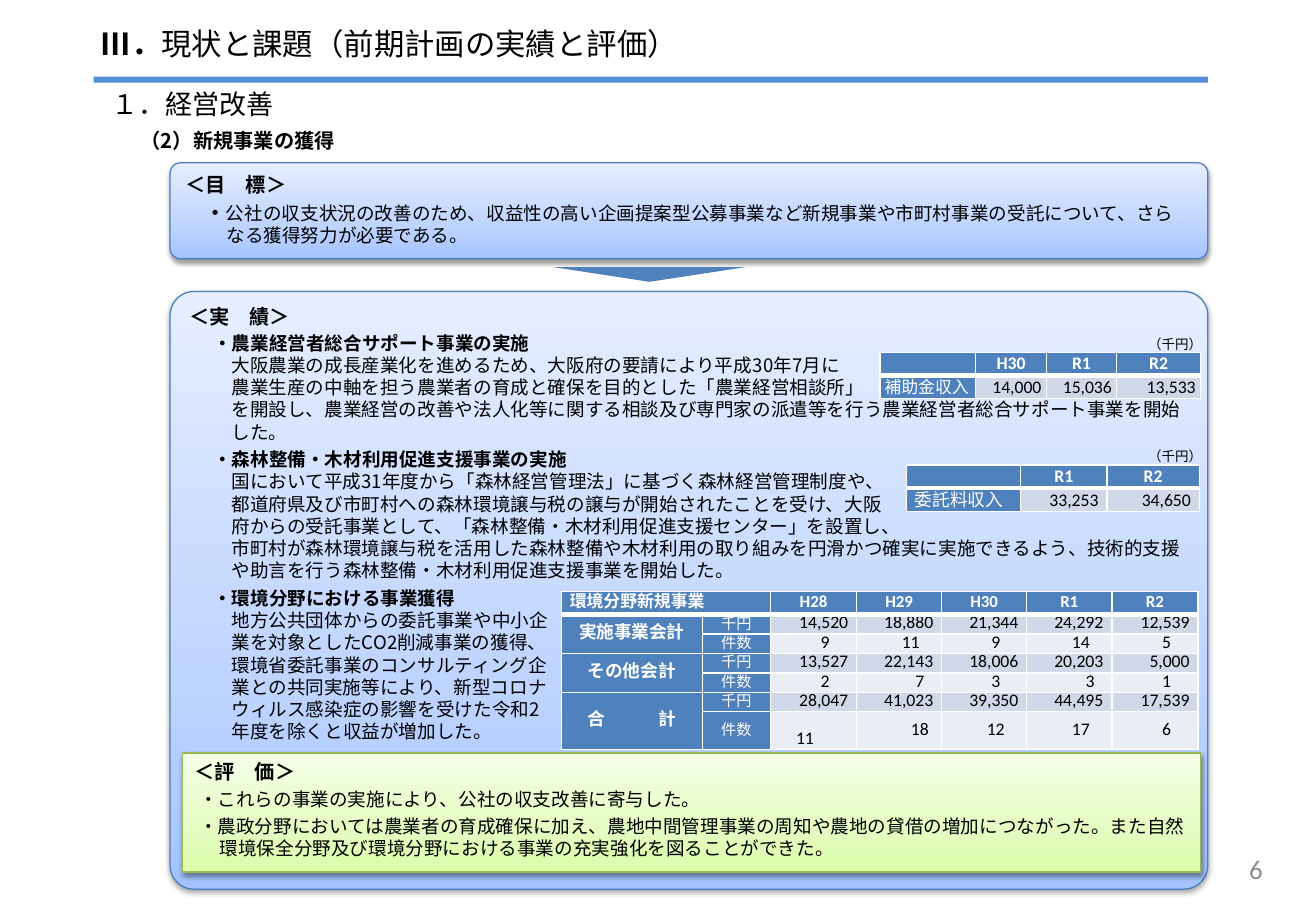
"""Build the slide on winning new business: goal, results and evaluation."""
from copy import deepcopy
from dataclasses import dataclass

from pptx import Presentation
from pptx.dml.color import RGBColor
from pptx.enum.shapes import MSO_SHAPE as Shape
from pptx.enum.text import MSO_ANCHOR as Anchor, PP_ALIGN as Align
from pptx.oxml import parse_xml
from pptx.oxml.ns import nsdecls, qn
from pptx.util import Pt

PX = 9144
SLIDE_SIZE = (1083, 750)


@dataclass(frozen=True)
class Theme:
    """Colours, fonts and type sizes of the slide."""
    black: str = "000000"
    white: str = "FFFFFF"
    grey: str = "8C8C8C"
    rule: str = "558ED5"
    accent: str = "4F81BD"
    band: str = "D0D8E8"
    pale_band: str = "E9EDF4"
    blue_panel: tuple = ("4B7EBC", "A4C4FF", "BFD4FF", "E6EEFF")
    green_panel: tuple = ("98B955", "DAFDA7", "E4FCC2", "F5FFE7")
    gothic: str = "Noto Sans CJK JP"
    latin: str = "Calibri"
    title: float = 18
    section: float = 16
    heading: float = 12
    body: float = 11
    table: float = 10.5
    label: float = 10
    measure: float = 9
    unit: float = 8
    line_height: float = 1.2


THEME = Theme()

TITLE = [("Ⅲ．", True), ("現状と課題（前期計画の実績と評価）", False)]
SECTION = [("１．経営改善", False)]
SUBSECTION = [("（2）新規事業の獲得", True)]
PAGE = [("6", False)]
UNIT = [("（千円）", False)]

GOAL = ("＜目　標＞", [
    ("item", "・", "公社の収支状況の改善のため、収益性の高い企画提案型公募事業など新規事業や市町村事業の受託について、さらなる獲得努力が必要である。"),
])
RESULTS = ("＜実　績＞", [
    ("first", "・農業経営者総合サポート事業の実施", ""),
    ("text", "", "大阪農業の成長産業化を進めるため、大阪府の要請により平成30年7月に"),
    ("text", "", "農業生産の中軸を担う農業者の育成と確保を目的とした「農業経営相談所」"),
    ("text", "", "を開設し、農業経営の改善や法人化等に関する相談及び専門家の派遣等を行う農業経営者総合サポート事業を開始した。"),
    ("next", "・森林整備・木材利用促進支援事業の実施", ""),
    ("text", "", "国において平成31年度から「森林経営管理法」に基づく森林経営管理制度や、"),
    ("text", "", "都道府県及び市町村への森林環境譲与税の譲与が開始されたことを受け、大阪"),
    ("text", "", "府からの受託事業として、「森林整備・木材利用促進支援センター」を設置し、"),
    ("text", "", "市町村が森林環境譲与税を活用した森林整備や木材利用の取り組みを円滑かつ確実に実施できるよう、技術的支援や助言を行う森林整備・木材利用促進支援事業を開始した。"),
    ("next", "・環境分野における事業獲得", ""),
    ("text", "", "地方公共団体からの委託事業や中小企"),
    ("text", "", "業を対象としたCO2削減事業の獲得、"),
    ("text", "", "環境省委託事業のコンサルティング企"),
    ("text", "", "業との共同実施等により、新型コロナ"),
    ("text", "", "ウィルス感染症の影響を受けた令和2"),
    ("text", "", "年度を除くと収益が増加した。"),
])
EVALUATION = ("＜評　価＞", [
    ("point", "", "・これらの事業の実施により、公社の収支改善に寄与した。"),
    ("point", "", "・農政分野においては農業者の育成確保に加え、農地中間管理事業の周知や農地の貸借の増加につながった。また自然環境保全分野及び環境分野における事業の充実強化を図ることができた。"),
])
INDENTS = {"item": (34, -17, 3.4), "first": (34, -14, 1.6), "next": (34, -14, 3),
           "text": (35, 0, 0), "point": (21, -17, 2.8)}

INCOME_TABLES = [
    ((724, 290), (79, 58, 58, 69), 4, THEME.label,
     [("", "H30", "R1", "R2"), ("補助金収入", "14,000", "15,036", "13,533")]),
    ((746, 383), (94, 71, 76), 7, THEME.table,
     [("", "R1", "R2"), ("委託料収入", "33,253", "34,650")]),
]
UNIT_TOPS = (272, 364)

ENVIRONMENT_TITLE = "環境分野新規事業"
ENVIRONMENT_COLUMNS = (116, 56, 71, 70, 70, 70, 71)
YEARS = ("H28", "H29", "H30", "R1", "R2")
MEASURES = ("千円", "件数")
ACCOUNTS = [
    ("実施事業会計", ("14,520", "18,880", "21,344", "24,292", "12,539"), ("9", "11", "9", "14", "5")),
    ("その他会計", ("13,527", "22,143", "18,006", "20,203", "5,000"), ("2", "7", "3", "3", "1")),
    ("合　　　計", ("28,047", "41,023", "39,350", "44,495", "17,539"), ("11", "18", "12", "17", "6")),
]
COUNT_INSETS = (26, 0, 7, 0)
SHIFTED_COUNT_INSETS = {(4, 3): (41, 0, 7, 0), (4, 5): (41, 0, 7, 0),
                        (6, 3): (41, 0, 7, 0), (6, 2): (7, 15, 21, 0)}

deck = Presentation()
deck.slide_width, deck.slide_height = (side * PX for side in SLIDE_SIZE)
slide = deck.slides.add_slide(deck.slide_layouts[6])


def emu(*lengths):
    return [length * PX for length in lengths]


def add_run(paragraph, text, size, bold=False, color=THEME.black, face=THEME.gothic):
    run = paragraph.add_run()
    run.text = text
    font = run.font
    font.size, font.bold, font.name = Pt(size), bold, face
    font.color.rgb = RGBColor.from_string(color)
    run._r.rPr.find(qn("a:latin")).addnext(
        parse_xml(f'<a:ea {nsdecls("a")} typeface="{THEME.gothic}"/>'))


def add_label(box, runs, size, color=THEME.black, face=THEME.gothic,
              align=Align.LEFT, anchor=Anchor.TOP):
    frame = slide.shapes.add_textbox(*emu(*box)).text_frame
    frame.word_wrap, frame.vertical_anchor = True, anchor
    paragraph = frame.paragraphs[0]
    paragraph.alignment = align
    paragraph.line_spacing = Pt(size * THEME.line_height)
    for text, bold in runs:
        add_run(paragraph, text, size, bold, color, face)


def add_block(kind, box, color):
    block = slide.shapes.add_shape(kind, *emu(*box))
    block.shadow.inherit = False
    block.fill.solid()
    block.fill.fore_color.rgb = RGBColor.from_string(color)
    block.line.fill.background()
    return block


def add_panel(kind, box, palette, content, corner=None, right_inset=10):
    outline, *shades = palette
    panel = add_block(kind, box, shades[0])
    if corner:
        panel.adjustments[0] = corner
    panel.fill.gradient()
    panel.fill.gradient_angle = 90
    stops = panel.element.spPr.find(qn("a:gradFill")).find(qn("a:gsLst"))
    stops.insert(1, deepcopy(stops[0]))
    for stop, position, shade in zip(panel.fill.gradient_stops, (0, 0.35, 1), shades):
        stop.position = position
        stop.color.rgb = RGBColor.from_string(shade)
    for stop in stops:
        for tint in list(stop[0]):
            stop[0].remove(tint)
    panel.line.color.rgb = RGBColor.from_string(outline)
    panel.line.width = Pt(0.75)
    panel.element.spPr.find(qn("a:effectLst")).append(parse_xml(
        f'<a:outerShdw {nsdecls("a")} blurRad="39370" dist="20320" dir="5400000" rotWithShape="0">'
        '<a:srgbClr val="000000"><a:alpha val="38000"/></a:srgbClr></a:outerShdw>'))
    frame = panel.text_frame
    frame.word_wrap, frame.vertical_anchor = True, Anchor.TOP
    frame.margin_left, frame.margin_top, frame.margin_right = emu(10, 5, right_inset)
    heading, items = content
    first = frame.paragraphs[0]
    first.alignment = Align.LEFT
    first.line_spacing = Pt(THEME.heading * THEME.line_height)
    add_run(first, heading, THEME.heading, True)
    for role, lead, text in items:
        left, hanging, before = INDENTS[role]
        paragraph = frame.add_paragraph()
        paragraph.alignment = Align.LEFT
        paragraph.line_spacing = Pt(THEME.body * THEME.line_height)
        paragraph.space_before = Pt(before)
        properties = paragraph._p.get_or_add_pPr()
        properties.set("marL", str(left * PX))
        properties.set("indent", str(hanging * PX))
        if lead:
            add_run(paragraph, lead, THEME.heading if role == "item" else THEME.body, True)
        if text:
            add_run(paragraph, text, THEME.body)


def add_grid(origin, columns, rows):
    grid = slide.shapes.add_table(len(rows), len(columns),
                                  *emu(*origin, sum(columns), sum(rows))).table
    grid.first_row = grid.horz_banding = False
    for column, width in zip(grid.columns, columns):
        column.width = width * PX
    for row, height in zip(grid.rows, rows):
        row.height = height * PX
    return grid


def fill_cell(cell, text, leading, insets, fill=THEME.accent, color=THEME.white, size=THEME.table,
              bold=False, face=THEME.latin, align=Align.CENTER, anchor=Anchor.MIDDLE, rule=1):
    properties = cell._tc.get_or_add_tcPr()
    for side, width in (("L", 1), ("R", 1), ("T", 1), ("B", rule)):
        properties.append(parse_xml(
            f'<a:ln{side} {nsdecls("a")} w="{Pt(width)}"><a:solidFill>'
            f'<a:srgbClr val="{THEME.white}"/></a:solidFill></a:ln{side}>'))
    cell.fill.solid()
    cell.fill.fore_color.rgb = RGBColor.from_string(fill)
    cell.margin_left, cell.margin_top, cell.margin_right, cell.margin_bottom = emu(*insets)
    cell.vertical_anchor = anchor
    paragraph = cell.text_frame.paragraphs[0]
    paragraph.alignment, paragraph.line_spacing = align, Pt(leading)
    if text:
        add_run(paragraph, text, size, bold, color, face)
    else:
        paragraph._p.append(parse_xml(f'<a:endParaRPr {nsdecls("a")} sz="{int(size * 100)}"/>'))


def add_income_table(origin, columns, inset, label_size, rows):
    grid = add_grid(origin, columns, (19, 19))
    insets = (inset, 0, inset, 0)
    for column, (year, value) in enumerate(zip(*rows)):
        fill_cell(grid.cell(0, column), year, 12, insets, bold=True, rule=3)
        style = (dict(fill=THEME.band, color=THEME.black, align=Align.RIGHT) if column
                 else dict(size=label_size, align=Align.LEFT))
        fill_cell(grid.cell(1, column), value, 12, insets, anchor=Anchor.BOTTOM, **style)


def add_environment_table():
    grid = add_grid((462, 487), ENVIRONMENT_COLUMNS, (19,) + (16,) * 5 + (31,))
    insets = (7, 0, 7, 0)
    for column, year in enumerate((ENVIRONMENT_TITLE, "") + YEARS):
        style = dict(face=THEME.gothic, align=Align.LEFT) if column == 0 else {}
        fill_cell(grid.cell(0, column), year, 11, insets, size=THEME.label, bold=True, rule=3, **style)
    grid.cell(0, 0).merge(grid.cell(0, 1))
    for index, (account, *series) in enumerate(ACCOUNTS):
        top = 1 + 2 * index
        for offset, (measure, values) in enumerate(zip(MEASURES, series)):
            row = top + offset
            fill_cell(grid.cell(row, 0), "" if offset else account, 11, insets,
                      bold=True, face=THEME.gothic)
            fill_cell(grid.cell(row, 1), measure, 11, insets, size=THEME.measure)
            for column, value in enumerate(values, 2):
                count_insets = SHIFTED_COUNT_INSETS.get((row, column), COUNT_INSETS)
                fill_cell(grid.cell(row, column), value, 11, count_insets if offset else insets,
                          THEME.pale_band if offset else THEME.band, THEME.black,
                          align=Align.CENTER if offset else Align.RIGHT)
        grid.cell(top, 0).merge(grid.cell(top + 1, 0))


add_label((796, 695, 253, 40), PAGE, THEME.section, THEME.grey, THEME.latin, Align.RIGHT, Anchor.MIDDLE)
add_label((73, 9, 528, 54), TITLE, THEME.title, anchor=Anchor.MIDDLE)
add_block(Shape.RECTANGLE, (77, 63, 917, 5), THEME.rule)
add_panel(Shape.ROUNDED_RECTANGLE, (140, 134, 854, 79), THEME.blue_panel, GOAL, 0.11, 13)
add_label((106, 101, 523, 30), SUBSECTION, THEME.heading)
add_block(Shape.ISOSCELES_TRIANGLE, (456, 220, 157, 12), THEME.accent).rotation = 180
add_panel(Shape.ROUNDED_RECTANGLE, (140, 240, 854, 492), THEME.blue_panel, RESULTS, 0.04)
add_panel(Shape.RECTANGLE, (150, 620, 838, 98), THEME.green_panel, EVALUATION)
add_label((82, 67, 406, 37), SECTION, THEME.section)
for income in INCOME_TABLES:
    add_income_table(*income)
add_environment_table()
for unit_top in UNIT_TOPS:
    add_label((935, unit_top, 78, 24), UNIT, THEME.unit, face=THEME.latin)
deck.save("out.pptx")
